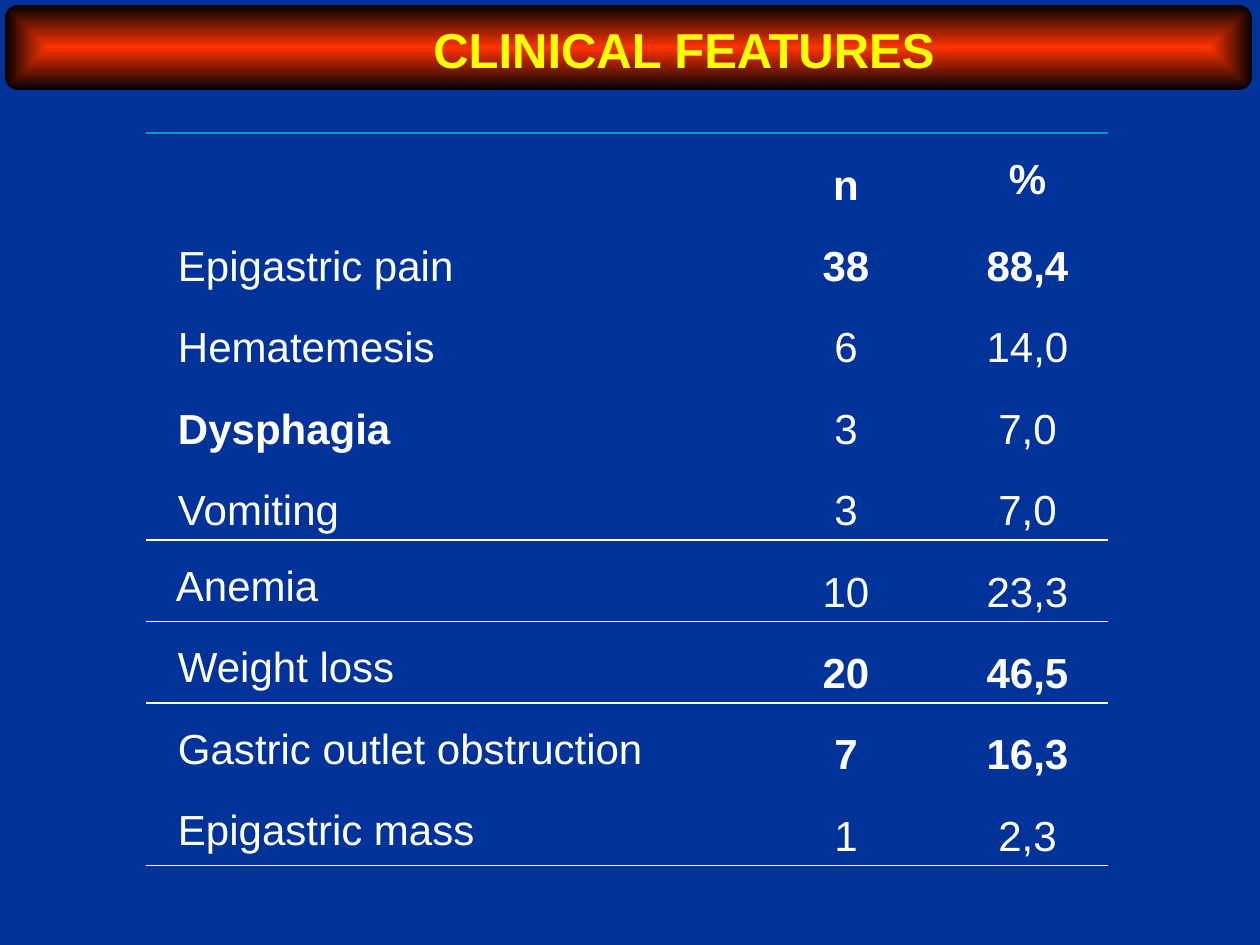
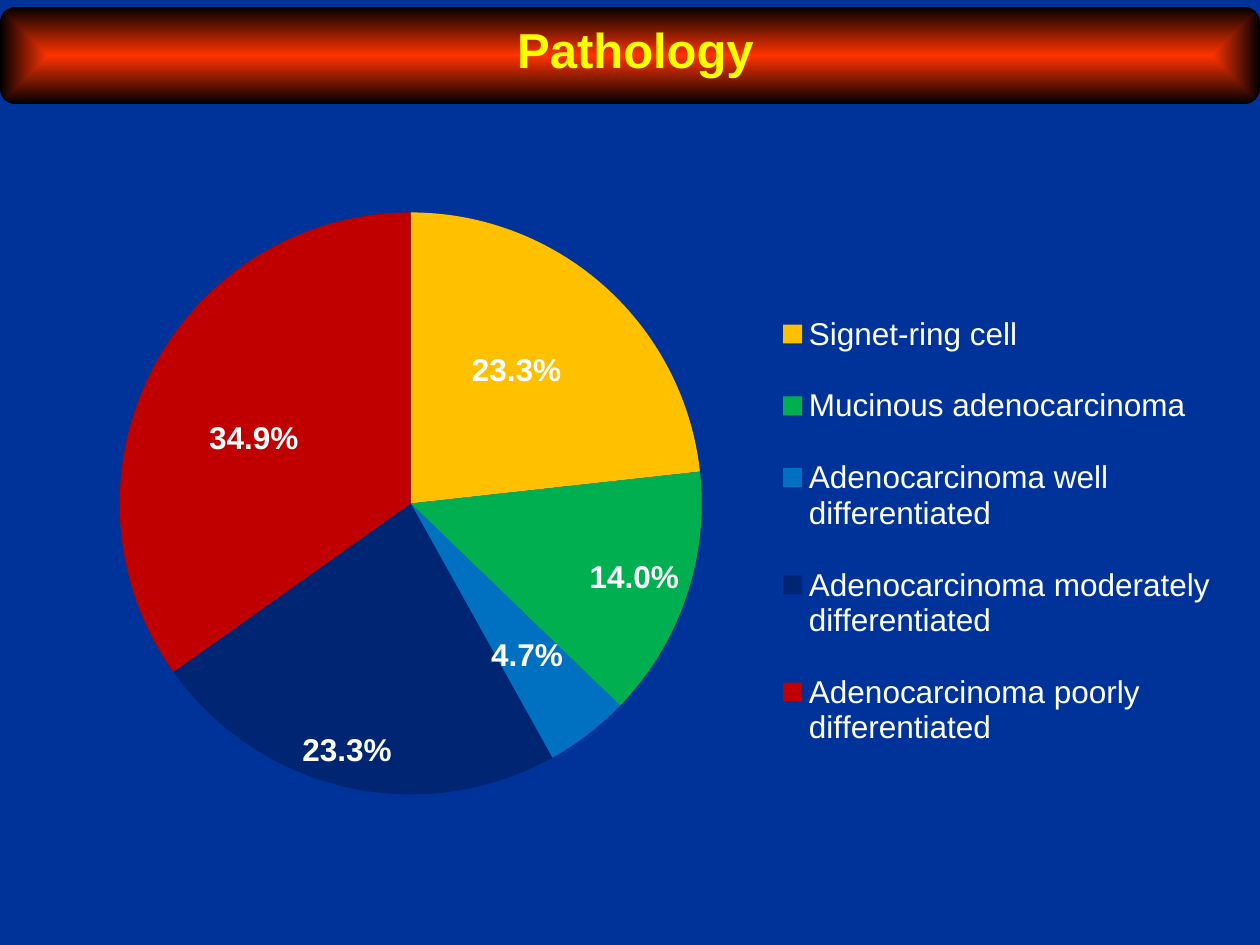
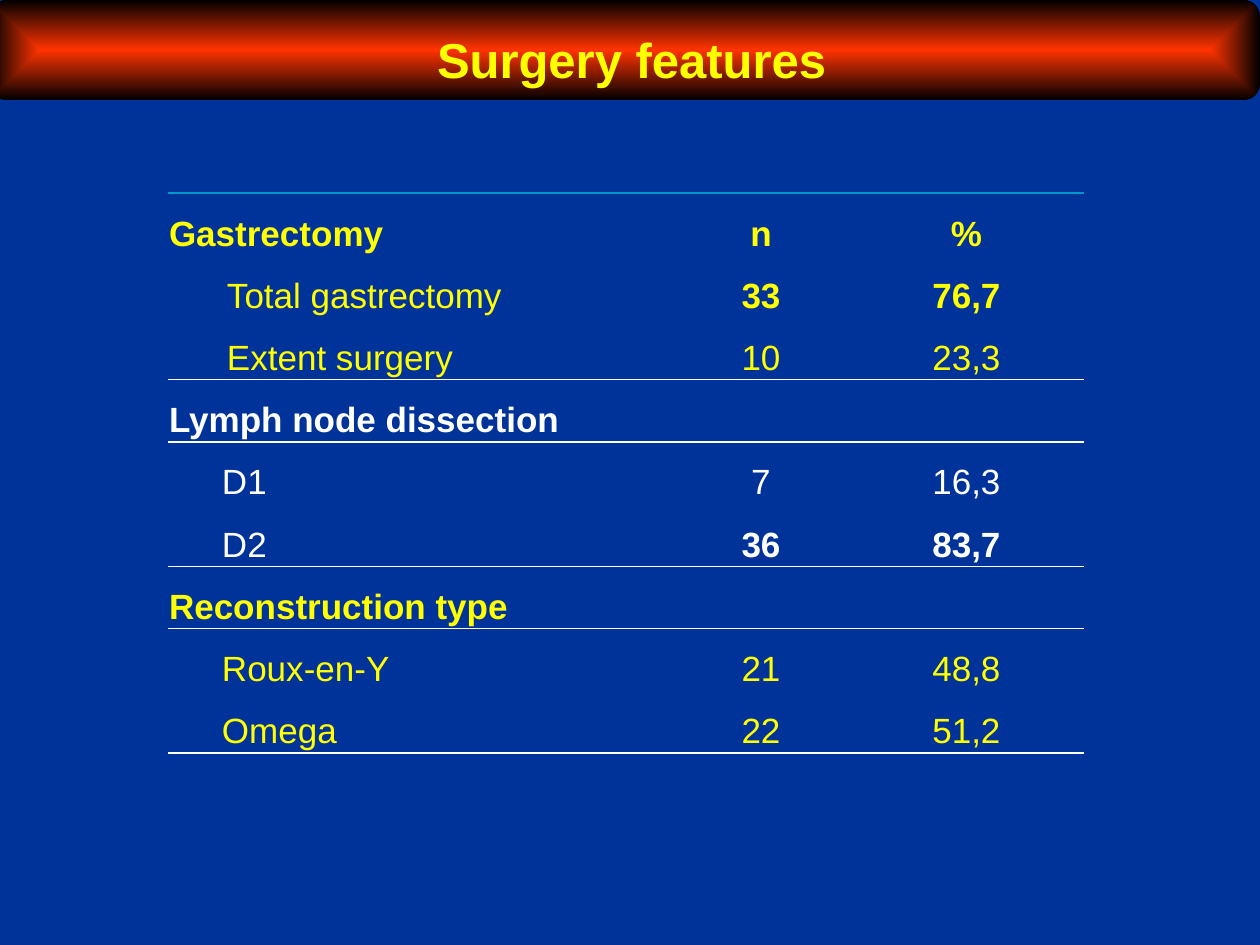
from dataclasses import dataclass

from lxml.etree import SubElement
from pptx import Presentation
from pptx.chart.data import CategoryChartData
from pptx.dml.color import RGBColor
from pptx.enum.chart import XL_CHART_TYPE, XL_LABEL_POSITION, XL_LEGEND_POSITION
from pptx.enum.shapes import MSO_SHAPE
from pptx.enum.text import MSO_ANCHOR, MSO_AUTO_SIZE, PP_ALIGN
from pptx.oxml.ns import qn
from pptx.util import Emu, Pt

PX_PER_INCH = 126
FONT = "Arial"
NAVY = "003399"
WHITE = "FFFFFF"
YELLOW = "FFFF00"
FLAME = "FF3300"
BLACK = "000000"
TEAL = "0099CC"
PLAIN_TABLE_STYLE = "{2D5ABB26-0587-4C30-8999-92F81FD0307C}"
PERCENT_FORMAT = '0.0"%"'
TOP, MIDDLE = MSO_ANCHOR.TOP, MSO_ANCHOR.MIDDLE


@dataclass(frozen=True)
class Box:
    left: int
    top: int
    width: int
    height: int


@dataclass(frozen=True)
class Header:
    title: str
    banner: Box
    title_box: Box


@dataclass(frozen=True)
class Finding:
    label: str
    n: str = ""
    percent: str = ""
    color: str = WHITE
    bold_label: bool = False
    bold_values: bool = False
    indent: int = 0
    rule_below: bool = False
    anchors: tuple = (MIDDLE, MIDDLE, MIDDLE)


@dataclass(frozen=True)
class FindingsTable:
    box: Box
    columns: tuple
    size: int
    inset_x: int
    inset_y: int
    findings: tuple


@dataclass(frozen=True)
class Diagnosis:
    name: str
    share: float
    color: str
    label_shift: tuple = ()


LABEL_TOP = (TOP, MIDDLE, MIDDLE)

CLINICAL_HEADER = Header("CLINICAL FEATURES", Box(5, 5, 1247, 85), Box(349, 13, 670, 60))
CLINICAL = FindingsTable(Box(146, 133, 962, 733), (599, 202, 161), 24, 9, 0, (
    Finding("", "n", "%", bold_values=True, anchors=(MIDDLE, MIDDLE, TOP)),
    Finding("Epigastric pain", "38", "88,4", bold_values=True, indent=23),
    Finding("Hematemesis", "6", "14,0", indent=23),
    Finding("Dysphagia", "3", "7,0", bold_label=True, indent=23),
    Finding("Vomiting", "3", "7,0", indent=23, rule_below=True),
    Finding("Anemia", "10", "23,3", indent=21, rule_below=True, anchors=LABEL_TOP),
    Finding("Weight loss", "20", "46,5", bold_values=True, indent=23, rule_below=True,
            anchors=LABEL_TOP),
    Finding("Gastric outlet obstruction", "7", "16,3", bold_values=True, indent=23,
            anchors=LABEL_TOP),
    Finding("Epigastric mass", "1", "2,3", indent=23, rule_below=True, anchors=LABEL_TOP),
))

PATHOLOGY_HEADER = Header("Pathology", Box(0, 7, 1260, 97), Box(485, 13, 301, 72))
PATHOLOGY_BOX = Box(0, 189, 1260, 636)
PIE_BOX = Box(120, 23, 582, 583)
LEGEND_BOX = Box(770, 91, 454, 502)
PATHOLOGY = (
    Diagnosis("Signet-ring cell", 23.3, "FFC000", (9, -25)),
    Diagnosis("Mucinous adenocarcinoma", 14, "00B050"),
    Diagnosis("Adenocarcinoma well differentiated", 4.7, "0070C0", (28, 37)),
    Diagnosis("Adenocarcinoma moderately differentiated", 23.3, "002673", (-32, 105)),
    Diagnosis("Adenocarcinoma poorly differentiated", 34.9, "C00000", (-28, 1)),
)

SURGERY_HEADER = Header("Surgery features", Box(-10, 0, 1270, 100), Box(339, 23, 585, 72))
SURGERY = FindingsTable(Box(168, 193, 916, 560), (505, 176, 235), 20, 1, 1, (
    Finding("Gastrectomy", "n", "%", YELLOW, True, True),
    Finding("Total gastrectomy", "33", "76,7", YELLOW, bold_values=True, indent=58),
    Finding("Extent surgery", "10", "23,3", YELLOW, indent=58, rule_below=True),
    Finding("Lymph node dissection", bold_label=True, rule_below=True),
    Finding("D1", "7", "16,3", indent=53),
    Finding("D2", "36", "83,7", bold_values=True, indent=53, rule_below=True),
    Finding("Reconstruction type", color=YELLOW, bold_label=True, rule_below=True),
    Finding("Roux-en-Y", "21", "48,8", YELLOW, indent=53),
    Finding("Omega", "22", "51,2", YELLOW, indent=53, rule_below=True),
))


def px(length: float) -> Emu:
    return Emu(round(length * 914400 / PX_PER_INCH))


def frame(box: Box) -> tuple:
    return px(box.left), px(box.top), px(box.width), px(box.height)


def rgb(color: str) -> RGBColor:
    return RGBColor.from_string(color)


def style_font(font, size: int, color: str, bold: bool = False) -> None:
    font.name = FONT
    font.size = Pt(size)
    font.bold = bold
    font.color.rgb = rgb(color)


def add_banner(slide, box: Box) -> None:
    banner = slide.shapes.add_shape(MSO_SHAPE.ROUNDED_RECTANGLE, *frame(box))
    banner.shadow.inherit = False
    banner.line.fill.background()
    banner.fill.gradient()
    for stop, color in zip(banner.fill.gradient_stops, (FLAME, BLACK)):
        stop.color.rgb = rgb(color)
    gradient = banner._element.spPr.find(qn("a:gradFill"))
    gradient.remove(gradient.find(qn("a:lin")))
    glow = SubElement(gradient, qn("a:path"), {"path": "shape"})
    SubElement(glow, qn("a:fillToRect"), {side: "50000" for side in "ltrb"})
    slide.shapes._spTree.insert(2, banner._element)


def add_headed_slide(prs, header: Header):
    slide = prs.slides.add_slide(prs.slide_layouts[5])
    add_banner(slide, header.banner)
    title = slide.shapes.title
    title.left, title.top, title.width, title.height = frame(header.title_box)
    text_frame = title.text_frame
    text_frame.text = header.title
    text_frame.word_wrap = False
    text_frame.auto_size = MSO_AUTO_SIZE.NONE
    text_frame.vertical_anchor = TOP
    paragraph = text_frame.paragraphs[0]
    paragraph.alignment = PP_ALIGN.CENTER
    style_font(paragraph.runs[0].font, 28, YELLOW, True)
    return slide


def add_rule(cell, edge: str, color: str) -> None:
    rule = SubElement(cell._tc.get_or_add_tcPr(), qn(edge), {"w": str(Pt(1))})
    SubElement(SubElement(rule, qn("a:solidFill")), qn("a:srgbClr"), {"val": color})


def fill_cell(cell, text: str, finding: Finding, is_label: bool, spec: FindingsTable) -> None:
    indent = finding.indent if is_label else 0
    cell.margin_left = px(spec.inset_x + indent)
    cell.margin_right = px(spec.inset_x)
    cell.margin_top = cell.margin_bottom = px(spec.inset_y)
    if text:
        cell.text_frame.text = text
        paragraph = cell.text_frame.paragraphs[0]
        paragraph.alignment = PP_ALIGN.LEFT if is_label else PP_ALIGN.CENTER
        paragraph.line_spacing = 1.5
        bold = finding.bold_label if is_label else finding.bold_values
        style_font(paragraph.runs[0].font, spec.size, finding.color, bold)


def add_findings(slide, spec: FindingsTable) -> None:
    count = len(spec.findings)
    table = slide.shapes.add_table(count, len(spec.columns), *frame(spec.box)).table
    table.first_row = table.horz_banding = False
    table._tbl.tblPr.find(qn("a:tableStyleId")).text = PLAIN_TABLE_STYLE
    for column, width in zip(table.columns, spec.columns):
        column.width = px(width)
    for index, finding in enumerate(spec.findings):
        table.rows[index].height = px(spec.box.height / count)
        for position, text in enumerate((finding.label, finding.n, finding.percent)):
            cell = table.cell(index, position)
            fill_cell(cell, text, finding, position == 0, spec)
            cell.vertical_anchor = finding.anchors[position]
            if index == 0:
                add_rule(cell, "a:lnT", TEAL)
            if finding.rule_below:
                add_rule(cell, "a:lnB", WHITE)
            cell.fill.background()


def set_layout(element, index: int, **settings) -> None:
    layout = element.find(qn("c:layout"))
    if layout is None:
        layout = SubElement(element, qn("c:layout"))
        element.insert(index, layout)
    for child in list(layout):
        layout.remove(child)
    manual = SubElement(layout, qn("c:manualLayout"))
    for tag, value in settings.items():
        SubElement(manual, qn(f"c:{tag}"), {"val": str(value)})


def across(length: int) -> float:
    return round(length / PATHOLOGY_BOX.width, 3)


def down(length: int) -> float:
    return round(length / PATHOLOGY_BOX.height, 3)


def place_in_chart(element, index: int, box: Box, **target) -> None:
    set_layout(element, index, **target, xMode="edge", yMode="edge",
               x=across(box.left), y=down(box.top),
               w=across(box.width), h=down(box.height))


def style_labels(labels, position) -> None:
    style_font(labels.font, 18, WHITE, True)
    labels.position = position


def shift_label(series, index: int, shift: tuple) -> None:
    style_labels(series.points[index].data_label, XL_LABEL_POSITION.CENTER)
    label = series.data_labels._element.xpath(f'c:dLbl[c:idx/@val="{index}"]')[0]
    set_layout(label, 1, x=across(shift[0]), y=down(shift[1]))
    label.insert(2, SubElement(label, qn("c:numFmt"),
                               {"formatCode": PERCENT_FORMAT, "sourceLinked": "0"}))


def add_pathology_pie(slide) -> None:
    data = CategoryChartData()
    data.categories = [diagnosis.name for diagnosis in PATHOLOGY]
    data.add_series("Series 1", [diagnosis.share for diagnosis in PATHOLOGY])
    chart = slide.shapes.add_chart(XL_CHART_TYPE.PIE, *frame(PATHOLOGY_BOX), data).chart
    chart.has_title = False
    style_font(chart.font, 18, WHITE)

    chart.has_legend = True
    chart.legend.position = XL_LEGEND_POSITION.RIGHT
    chart.legend.include_in_layout = False
    style_font(chart.legend.font, 18, WHITE)
    place_in_chart(chart.legend._element, 1, LEGEND_BOX)
    place_in_chart(chart._chartSpace.chart.plotArea, 0, PIE_BOX, layoutTarget="inner")

    chart.plots[0].vary_by_categories = True
    series = chart.plots[0].series[0]
    labels = series.data_labels
    labels.show_value = True
    labels.number_format = PERCENT_FORMAT
    labels.number_format_is_linked = False
    style_labels(labels, XL_LABEL_POSITION.INSIDE_END)
    for leader_lines in labels._element.xpath("c:showLeaderLines"):
        leader_lines.set("val", "0")
    for index, diagnosis in enumerate(PATHOLOGY):
        wedge = series.points[index].format
        wedge.fill.solid()
        wedge.fill.fore_color.rgb = rgb(diagnosis.color)
        wedge.line.fill.background()
        if diagnosis.label_shift:
            shift_label(series, index, diagnosis.label_shift)


def main() -> None:
    prs = Presentation()
    prs.slide_width, prs.slide_height = px(1260), px(945)
    backdrop = prs.slide_master.background.fill
    backdrop.solid()
    backdrop.fore_color.rgb = rgb(NAVY)

    add_findings(add_headed_slide(prs, CLINICAL_HEADER), CLINICAL)
    add_pathology_pie(add_headed_slide(prs, PATHOLOGY_HEADER))
    add_findings(add_headed_slide(prs, SURGERY_HEADER), SURGERY)
    prs.save("out.pptx")


if __name__ == "__main__":
    main()
